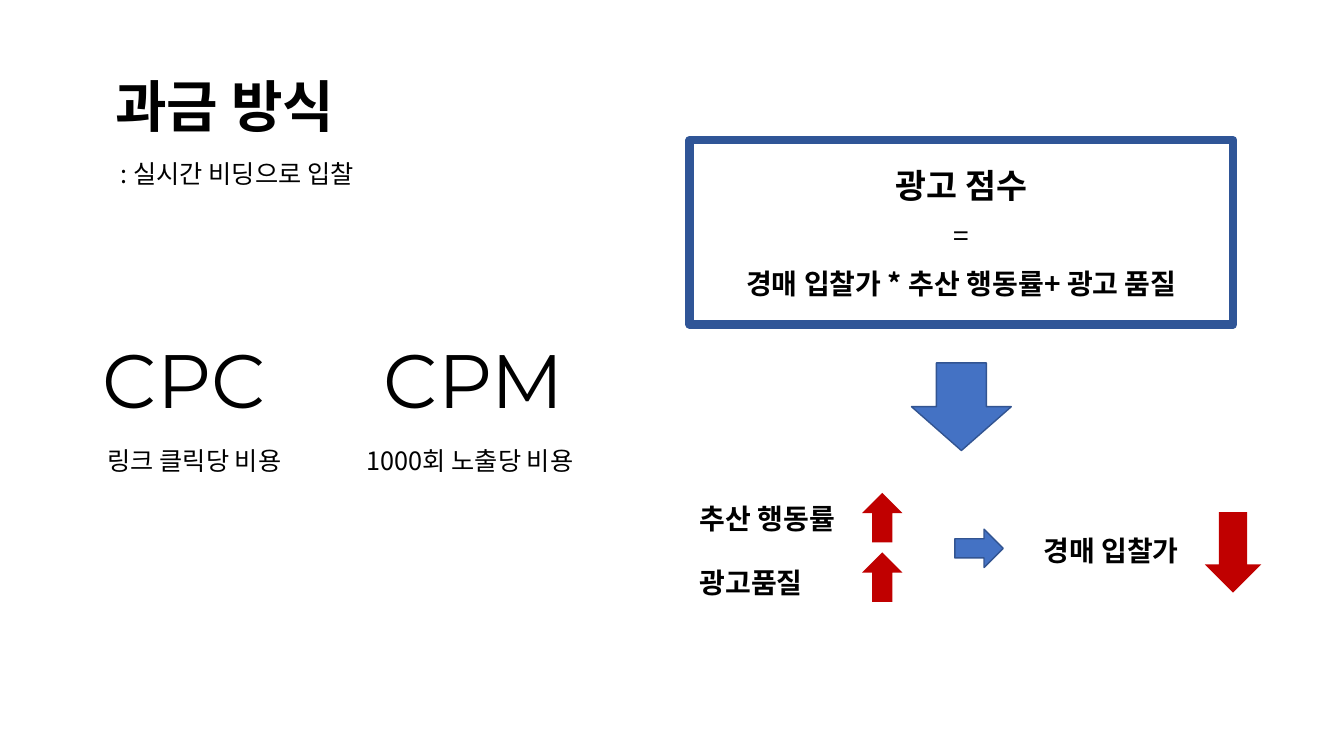
from pptx import Presentation
from pptx.dml.color import RGBColor
from pptx.enum.shapes import MSO_SHAPE
from pptx.enum.text import MSO_ANCHOR, MSO_AUTO_SIZE, PP_ALIGN
from pptx.oxml.ns import qn
from pptx.util import Pt
from lxml import etree

PX = 9144
LATIN, KOREAN = "Montserrat", "Noto Sans CJK KR"
BLACK, BLUE, EDGE, FRAME, RED = "000000", "4472C4", "325491", "2F5597", "C00000"
DOWN, RIGHT = MSO_SHAPE.DOWN_ARROW, MSO_SHAPE.RIGHT_ARROW
LEFT, CENTER = PP_ALIGN.LEFT, PP_ALIGN.CENTER
TOP, MIDDLE = MSO_ANCHOR.TOP, MSO_ANCHOR.MIDDLE
NO_FIT = MSO_AUTO_SIZE.NONE

TITLE = (" 과금 방식", (92, 36, 1150, 145))
SCORE_BOX = (684, 139, 539, 183)
SCORE = [("광고 점수", 24, True), ("=", 20, False),
         ("경매 입찰가 * 추산 행동률+ 광고 품질", 20, True)]
LABELS = [
    ("CPM", (371, 325, 225, 101), 54, LATIN),
    ("CPC", (92, 325, 225, 101), 54, LATIN),
    ("링크 클릭당 비용", (97, 437, 214, 40), 18, KOREAN),
    ("1000회 노출당 비용", (354, 437, 259, 40), 18, KOREAN),
    (": 실시간 비딩으로 입찰", (110, 152, 297, 40), 18, KOREAN),
]
EFFECTS = [
    (["추산 행동률", "광고품질"], (684, 446, 241, 183)),
    (["경매 입찰가"], (1025, 446, 263, 183)),
]
ARROWS = [
    (DOWN, (904, 360, 99, 87), 0, BLUE, EDGE),
    (DOWN, (855, 548, 40, 49), 180, RED, None),
    (DOWN, (855, 489, 40, 49), 180, RED, None),
    (RIGHT, (947, 525, 48, 38), 0, BLUE, EDGE),
    (DOWN, (1195, 508, 56, 80), 0, RED, None),
]


def rgb(value):
    return RGBColor.from_string(value)


def emu(box):
    return [v * PX for v in box]


def place(sp, box):
    sp.left, sp.top, sp.width, sp.height = emu(box)


def write(sp, lines, font=KOREAN, align=LEFT, anchor=TOP, spacing=1.0, before=0):
    tf = sp.text_frame
    tf.word_wrap = True
    tf.auto_size = NO_FIT
    tf.vertical_anchor = anchor
    for i, (text, size, bold) in enumerate(lines):
        p = tf.add_paragraph() if i else tf.paragraphs[0]
        p.alignment = align
        p.line_spacing = spacing
        p.space_before = Pt(before)
        pPr = p._p.get_or_add_pPr()
        pPr.set("marL", "0")
        pPr.set("indent", "0")
        etree.SubElement(pPr, qn("a:buNone"))
        r = p.add_run()
        r.text = text
        r.font.size = Pt(size)
        r.font.bold = bold
        r.font.name = font
        r.font.color.rgb = rgb(BLACK)
        ea = etree.SubElement(r._r.get_or_add_rPr(), qn("a:ea"))
        ea.set("typeface", KOREAN)


def main():
    prs = Presentation()
    prs.slide_width, prs.slide_height = 1333 * PX, 750 * PX
    s = prs.slides.add_slide(prs.slide_layouts[1])
    title, score = s.placeholders

    text, box = TITLE
    place(title, box)
    write(title, [(text, 40, True)], font=LATIN, anchor=MIDDLE, spacing=0.9)

    place(score, SCORE_BOX)
    score.line.color.rgb = rgb(FRAME)
    score.line.width = Pt(6)
    write(score, SCORE, align=CENTER, anchor=MIDDLE, before=10)

    for text, box, size, font in LABELS:
        write(s.shapes.add_textbox(*emu(box)), [(text, size, False)], font=font)

    for texts, box in EFFECTS:
        write(s.shapes.add_textbox(*emu(box)), [(t, 20, True) for t in texts],
              anchor=MIDDLE, spacing=1.5, before=10)

    for kind, box, turn, fill, edge in ARROWS:
        sp = s.shapes.add_shape(kind, *emu(box))
        sp.rotation = turn
        sp.shadow.inherit = False
        sp.fill.solid()
        sp.fill.fore_color.rgb = rgb(fill)
        if edge:
            sp.line.color.rgb = rgb(edge)
            sp.line.width = Pt(1)
        else:
            sp.line.fill.background()

    prs.save("out.pptx")


if __name__ == "__main__":
    main()
